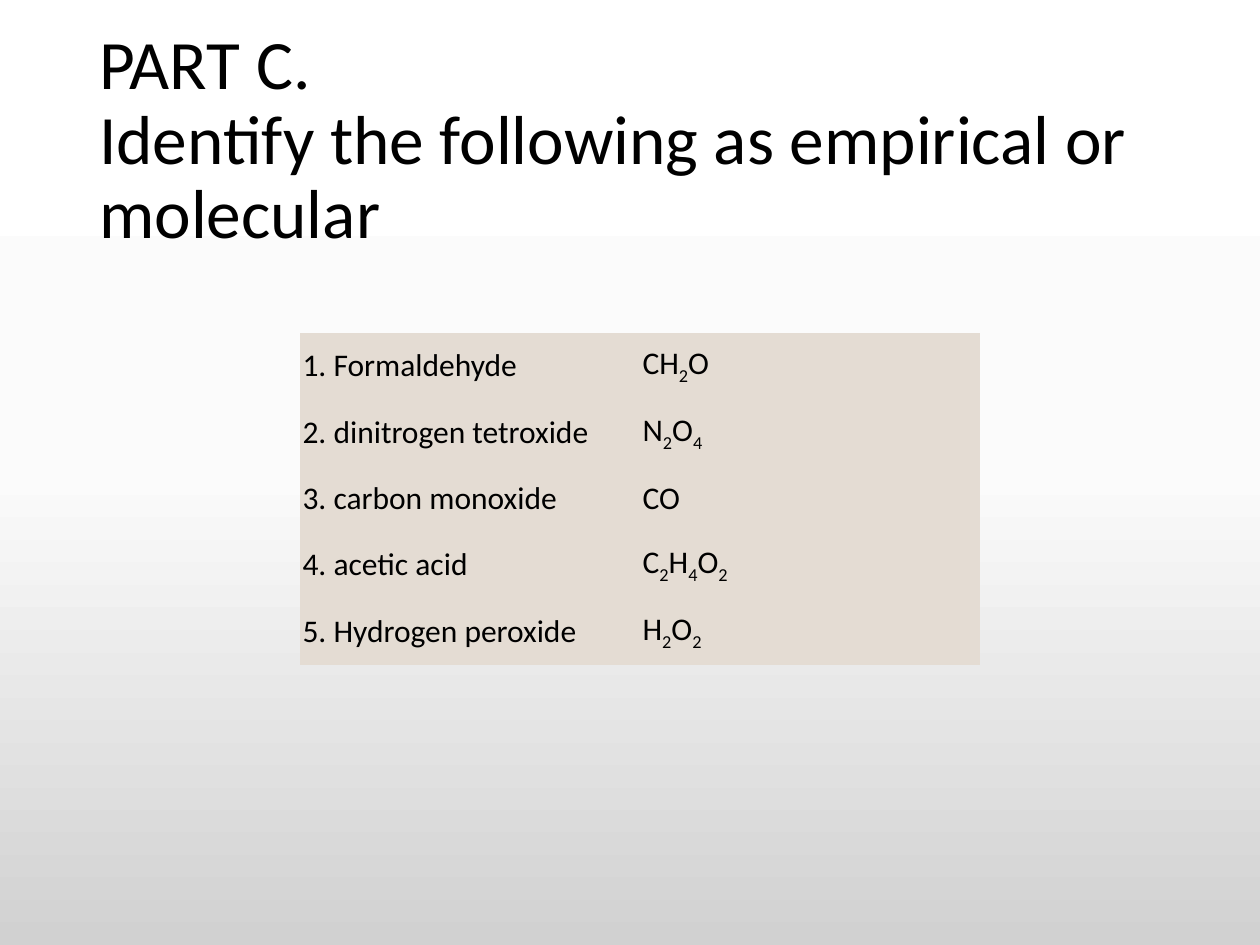
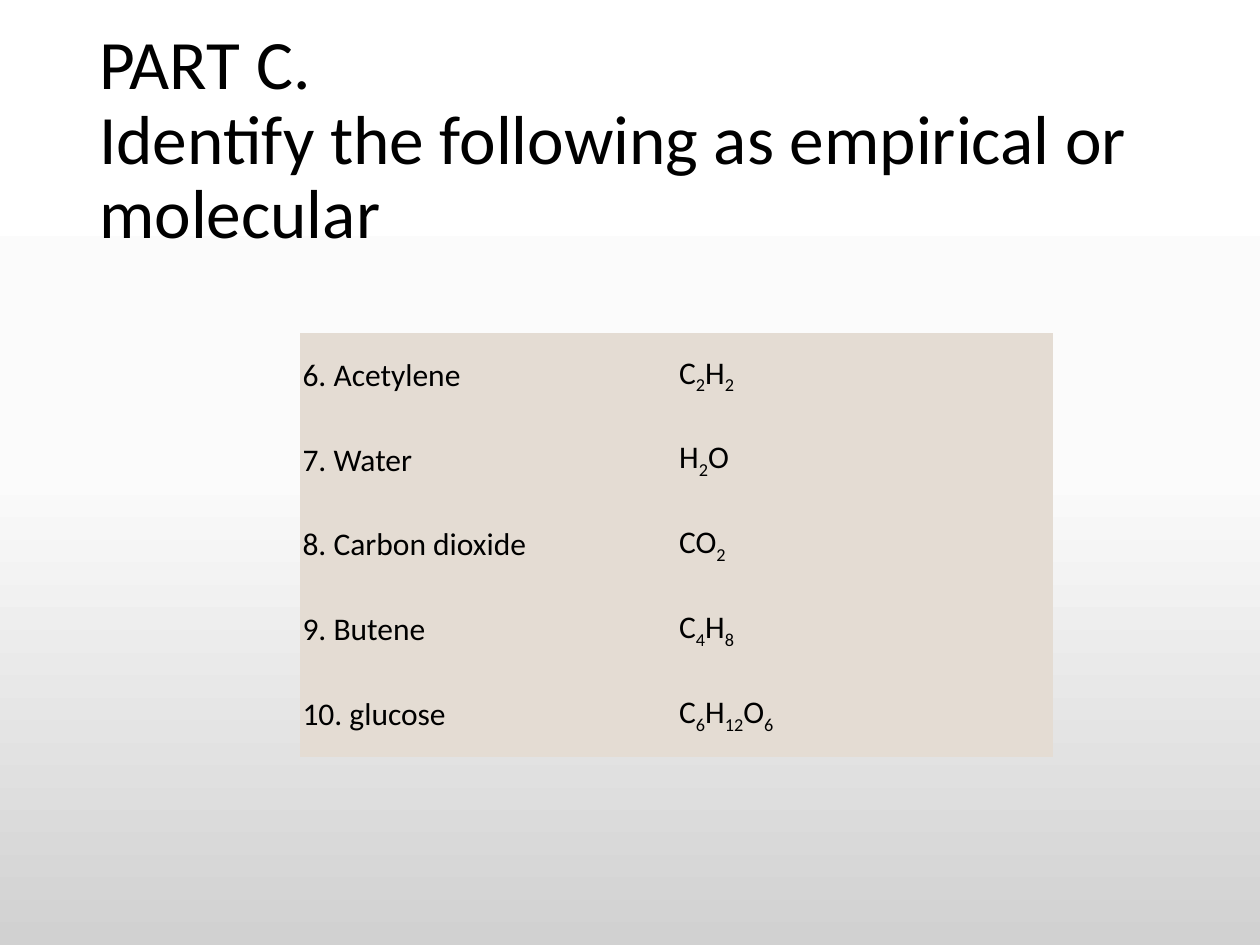
from copy import deepcopy
from itertools import groupby

from pptx import Presentation
from pptx.dml.color import RGBColor
from pptx.enum.text import MSO_ANCHOR, MSO_AUTO_SIZE, PP_ALIGN
from pptx.oxml.ns import qn
from pptx.util import Pt

# Content
HEADING = "PART C.\nIdentify the following as empirical or molecular"
EXERCISES = [
    {
        "first_number": 1,
        "column_width": 194.3,
        "row_height": 37.9,
        "compounds": [
            ("Formaldehyde", "CH2O"),
            ("dinitrogen tetroxide", "N2O4"),
            ("carbon monoxide", "CO"),
            ("acetic acid", "C2H4O2"),
            ("Hydrogen peroxide", "H2O2"),
        ],
    },
    {
        "first_number": 6,
        "column_width": 215.2,
        "row_height": 48.5,
        "compounds": [
            ("Acetylene", "C2H2"),
            ("Water", "H2O"),
            ("Carbon dioxide", "CO2"),
            ("Butene", "C4H8"),
            ("glucose", "C6H12O6"),
        ],
    },
]

# Shared look
COLORS = {"text": "000000", "cell": "E4DCD3",
          "top": "FFFFFF", "middle": "FBFBFB", "bottom": "D1D1D1"}
FONT = "Calibri"
HEADING_BOX = (49.5, 28.75, 621, 104.4)
TABLE_LEFT, TABLE_TOP = 171.4, 190.3
CELL_INSET = 1.5
NO_TABLE_STYLE = "{2D5ABB26-0587-4C30-8999-92F81FD0307C}"


def rgb(name):
    return RGBColor.from_string(COLORS[name])


def write(frame, text, size=18, line_spacing=None, formula=False):
    """Write text; in a formula, digits become subscripts."""
    paragraph = frame.paragraphs[0]
    paragraph.alignment = PP_ALIGN.LEFT
    if line_spacing:
        paragraph.line_spacing = line_spacing
    for index, line in enumerate(text.split("\n")):
        if index:
            paragraph.add_line_break()
        for is_digit, letters in groupby(line, lambda c: formula and c.isdigit()):
            run = paragraph.add_run()
            run.text = "".join(letters)
            run.font.name = FONT
            run.font.size = Pt(size)
            run.font.color.rgb = rgb("text")
            if is_digit:
                run._r.get_or_add_rPr().set("baseline", "-25000")


def paint_background(master):
    fill = master.background.fill
    fill.gradient()
    fill.gradient_angle = 270
    stop_list = master.element.find(".//" + qn("a:gsLst"))
    stop_list.insert(1, deepcopy(stop_list[0]))
    for stop, name, position in zip(
            fill.gradient_stops, ("top", "middle", "bottom"), (0, 0.5, 1)):
        stop.color.rgb = rgb(name)
        stop.position = position


def add_heading(slide):
    heading = slide.shapes.title
    heading.left, heading.top, heading.width, heading.height = map(Pt, HEADING_BOX)
    frame = heading.text_frame
    frame.word_wrap = True
    frame.auto_size = MSO_AUTO_SIZE.NONE
    frame.vertical_anchor = MSO_ANCHOR.MIDDLE
    write(frame, HEADING, size=39.6, line_spacing=0.9)


def add_compounds(slide, first_number, column_width, row_height, compounds):
    table = slide.shapes.add_table(
        len(compounds), 2, Pt(TABLE_LEFT), Pt(TABLE_TOP),
        Pt(2 * column_width), Pt(len(compounds) * row_height)).table
    table.first_row = table.horz_banding = False
    table._tbl.tblPr.find(qn("a:tableStyleId")).text = NO_TABLE_STYLE
    for column in table.columns:
        column.width = Pt(column_width)
    for row, (compound, formula) in enumerate(compounds):
        table.rows[row].height = Pt(row_height)
        name_cell, formula_cell = table.cell(row, 0), table.cell(row, 1)
        for cell in (name_cell, formula_cell):
            cell.fill.solid()
            cell.fill.fore_color.rgb = rgb("cell")
            cell.vertical_anchor = MSO_ANCHOR.MIDDLE
            cell.margin_left = cell.margin_right = Pt(CELL_INSET)
            cell.margin_top = cell.margin_bottom = Pt(CELL_INSET)
        write(name_cell.text_frame, f"{first_number + row}. {compound}")
        write(formula_cell.text_frame, formula, formula=True)


def main():
    prs = Presentation()
    prs.slide_width, prs.slide_height = Pt(720), Pt(540)
    paint_background(prs.slide_master)
    title_only = prs.slide_layouts[5]
    for exercise in EXERCISES:
        slide = prs.slides.add_slide(title_only)
        add_heading(slide)
        add_compounds(slide, **exercise)
    prs.save("out.pptx")


if __name__ == "__main__":
    main()
